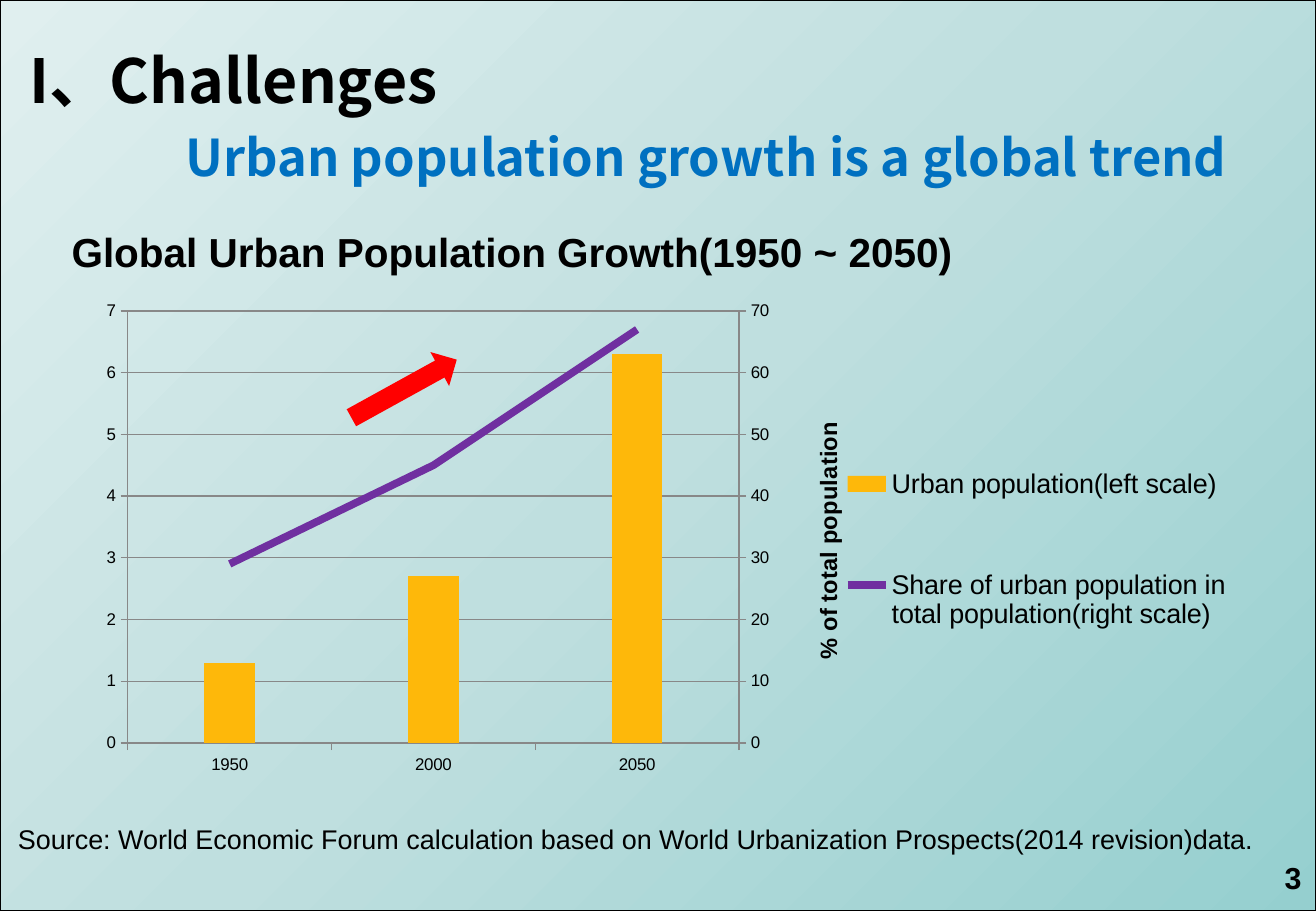
import copy
from dataclasses import dataclass

import pptx
import pptx.chart.axis
import pptx.chart.data
import pptx.dml.color
import pptx.enum.chart
import pptx.enum.dml
import pptx.enum.shapes
import pptx.enum.text
import pptx.oxml
import pptx.oxml.ns
import pptx.util

Pt = pptx.util.Pt
qn = pptx.oxml.ns.qn
ALIGN = pptx.enum.text.PP_ALIGN
ANCHOR = pptx.enum.text.MSO_ANCHOR
FIT = pptx.enum.text.MSO_AUTO_SIZE
XL = pptx.enum.chart

WIDTH, HEIGHT = 779.76, 540
HEADING_FONT, BODY_FONT = "Noto Sans CJK SC", "Arial"
COLORS = {
    "text": "000000", "subtitle": "0070C0", "bars": "FEB80A", "share": "7030A0",
    "arrow": "FF0000", "axis": "888888",
    "deep": "95CFCF", "middle": "BFDFDF", "pale": "E0EFEF",
}


@dataclass
class Label:
    text: str
    box: tuple[float, float, float, float]
    size: float
    bold: bool = False
    align: ALIGN = ALIGN.LEFT
    inset: tuple[float, float] = (7.2, 3.6)
    anchor: ANCHOR = ANCHOR.TOP


@dataclass
class ScaleAxis:
    title: str
    size: float
    maximum: float
    unit: float
    corner: tuple[float, float]


LABELS = [
    Label("3", (702, 509, 72, 21.6), 18, True, ALIGN.RIGHT, (2.9, 2.9), ANCHOR.MIDDLE),
    Label("Global Urban Population Growth(1950 ~ 2050)", (35.3, 131, 541.4, 36), 24, True),
    Label("Source: World Economic Forum calculation based on World Urbanization "
          "Prospects(2014 revision)data.", (3.6, 483.8, 751, 26.6), 16),
]
LEFT_SCALE = ScaleAxis("billions", 16, 7, 1, (0.01, 0.38))
RIGHT_SCALE = ScaleAxis("% of total population", 14, 70, 10, (0.64, 0.24))


def rgb(name: str) -> pptx.dml.color.RGBColor:
    return pptx.dml.color.RGBColor.from_string(COLORS[name])


def apply(target, **values) -> None:
    for name, value in values.items():
        setattr(target, name, value)


def style_font(font, size: float, bold: bool = False, color: str = "text",
               name: str = BODY_FONT) -> None:
    apply(font, size=Pt(size), bold=bold, name=name)
    font.color.rgb = rgb(color)


def style_line(line, color: str, width: float) -> None:
    line.width = Pt(width)
    line.color.rgb = rgb(color)


def place(sp, box: tuple[float, float, float, float]) -> None:
    apply(sp, **dict(zip(("left", "top", "width", "height"), map(Pt, box))))


def add_label(slide, label: Label) -> None:
    tf = slide.shapes.add_textbox(*map(Pt, label.box)).text_frame
    across, down = map(Pt, label.inset)
    apply(tf, word_wrap=label.align == ALIGN.RIGHT, vertical_anchor=label.anchor,
          margin_left=across, margin_right=across, margin_top=down, margin_bottom=down)
    p = tf.paragraphs[0]
    p.alignment = label.align
    r = p.add_run()
    r.text = label.text
    style_font(r.font, label.size, label.bold)


def set_layout(element, index: int, x: float, y: float, w: float = 0, h: float = 0,
               inner: bool = False) -> None:
    """Give a chart part a manual position, in fractions of the chart."""
    for old in element.findall(qn("c:layout")):
        element.remove(old)
    values = [("layoutTarget", "inner")] if inner else []
    values += [("xMode", "edge"), ("yMode", "edge"), ("x", x), ("y", y)]
    values += [("w", w), ("h", h)] if w else []
    body = "".join(f'<c:{tag} val="{value}"/>' for tag, value in values)
    element.insert(index, pptx.oxml.parse_xml(
        f'<c:layout {pptx.oxml.ns.nsdecls("c")}><c:manualLayout>{body}</c:manualLayout></c:layout>'))


def format_scale(axis, scale: ScaleAxis) -> None:
    apply(axis, minimum_scale=0, maximum_scale=scale.maximum, major_unit=scale.unit)
    tf = axis.axis_title.text_frame
    tf.text = scale.title
    style_font(tf.paragraphs[0].runs[0].font, scale.size, True)
    title = axis.axis_title.element if hasattr(axis.axis_title, "element") else axis.axis_title._element
    body = title.find(".//" + qn("a:bodyPr"))
    body.set("rot", "-5400000")
    body.set("vert", "horz")
    set_layout(title, 1, *scale.corner)


def move_to_right_axis(chart) -> pptx.chart.axis.ValueAxis:
    """Turn the second series into a line on its own pair of axes."""
    area = chart.element.xpath(".//c:plotArea")[0]
    bars, cat, val = (area.find(qn(f"c:{tag}")) for tag in ("barChart", "catAx", "valAx"))
    ser = bars.findall(qn("c:ser"))[1]
    for invert in ser.findall(qn("c:invertIfNegative")):
        ser.remove(invert)
    line = pptx.oxml.parse_xml(
        f'<c:lineChart {pptx.oxml.ns.nsdecls("c")}><c:grouping val="standard"/>'
        '<c:varyColors val="0"/><c:marker val="1"/>'
        '<c:axId val="501"/><c:axId val="502"/></c:lineChart>')
    line.insert(2, ser)
    bars.addnext(line)
    right_val, right_cat = copy.deepcopy(val), copy.deepcopy(cat)
    for axis, own, other in ((right_val, "502", "501"), (right_cat, "501", "502")):
        axis.find(qn("c:axId")).set("val", own)
        axis.find(qn("c:crossAx")).set("val", other)
    right_val.find(qn("c:axPos")).set("val", "r")
    right_val.find(qn("c:crosses")).set("val", "max")
    val.addnext(right_val)
    right_val.addnext(right_cat)
    pptx.chart.axis.CategoryAxis(right_cat).visible = False
    right = pptx.chart.axis.ValueAxis(right_val)
    right.has_major_gridlines = False
    return right


def add_population_chart(slide) -> None:
    data = pptx.chart.data.CategoryChartData()
    data.categories = ["1950", "2000", "2050"]
    data.add_series("Urban population(left scale)", (1.3, 2.7, 6.3))
    data.add_series("Share of urban population in total population(right scale)", (29, 45, 67))
    chart = slide.shapes.add_chart(XL.XL_CHART_TYPE.COLUMN_CLUSTERED,
                                   *map(Pt, (23.8, 175.7, 711.4, 299.5)), data).chart
    apply(chart, has_title=False, has_legend=True)
    style_font(chart.font, 10)

    # Axes
    for axis in (chart.category_axis, chart.value_axis):
        apply(axis, major_tick_mark=XL.XL_TICK_MARK.OUTSIDE,
              minor_tick_mark=XL.XL_TICK_MARK.NONE)
        style_line(axis.format.line, "axis", 0.75)
    chart.value_axis.has_major_gridlines = True
    style_line(chart.value_axis.major_gridlines.format.line, "axis", 0.75)
    right = move_to_right_axis(chart)
    format_scale(chart.value_axis, LEFT_SCALE)
    format_scale(right, RIGHT_SCALE)

    # Series
    columns, lines = chart.plots
    apply(columns, gap_width=301, vary_by_categories=False)
    fill = columns.series[0].format.fill
    fill.solid()
    fill.fore_color.rgb = rgb("bars")
    share = lines.series[0]
    share.smooth = False
    share.marker.style = XL.XL_MARKER_STYLE.NONE
    style_line(share.format.line, "share", 4.5)

    # Legend and plot area
    apply(chart.legend, position=XL.XL_LEGEND_POSITION.RIGHT, include_in_layout=True)
    style_font(chart.legend.font, 16)
    set_layout(chart.element.xpath(".//c:legend")[0], 1, 0.66, 0.2, 0.34, 0.6)
    set_layout(chart.element.xpath(".//c:plotArea")[0], 0, 0.073, 0.029, 0.509, 0.855, True)


def add_background(slide) -> None:
    sp = slide.shapes.add_shape(pptx.enum.shapes.MSO_SHAPE.RECTANGLE, 0, 0, Pt(WIDTH), Pt(HEIGHT))
    sp.shadow.inherit = False
    style_line(sp.line, "text", 0.75)
    sp.fill.gradient()
    sp.fill.gradient_angle = 135
    stops = sp.element.find(".//" + qn("a:gsLst"))
    stops.insert(1, copy.deepcopy(stops[0]))
    for stop, color, position in zip(sp.fill.gradient_stops, ("deep", "middle", "pale"), (0, 0.5, 1)):
        stop.color.rgb = rgb(color)
        stop.position = position
    slide.shapes.element.insert(2, sp.element) if hasattr(slide.shapes, "element") \
        else slide.shapes._spTree.insert(2, sp.element)


def fill_title(slide) -> None:
    sp = slide.shapes.title
    place(sp, (10, 21.6, 724.3, 93.6))
    tf = sp.text_frame
    apply(tf, word_wrap=True, auto_size=FIT.SHAPE_TO_FIT_TEXT, vertical_anchor=ANCHOR.TOP)
    tf.text = "I、Challenges\nUrban population growth is a global trend"
    formats = ((36, "text", ALIGN.LEFT, 0), (30, "subtitle", ALIGN.RIGHT, 6))
    for p, (size, color, align, before) in zip(tf.paragraphs, formats):
        apply(p, alignment=align, space_before=Pt(before))
        style_font(p.runs[0].font, size, True, color, HEADING_FONT)


def add_growth_arrow(slide) -> None:
    sp = slide.shapes.add_shape(pptx.enum.shapes.MSO_SHAPE.RIGHT_ARROW,
                                *map(Pt, (203.8, 218.9, 71.3, 23)))
    sp.rotation = 331.1
    sp.shadow.inherit = False
    sp.fill.solid()
    sp.fill.fore_color.rgb = rgb("arrow")
    sp.line.fill.background()


def main() -> None:
    prs = pptx.Presentation()
    apply(prs, slide_width=Pt(WIDTH), slide_height=Pt(HEIGHT))
    slide = prs.slides.add_slide(prs.slide_layouts[5])
    add_background(slide)
    fill_title(slide)
    for label in LABELS:
        add_label(slide, label)
    add_population_chart(slide)
    add_growth_arrow(slide)
    prs.save("out.pptx")


if __name__ == "__main__":
    main()
